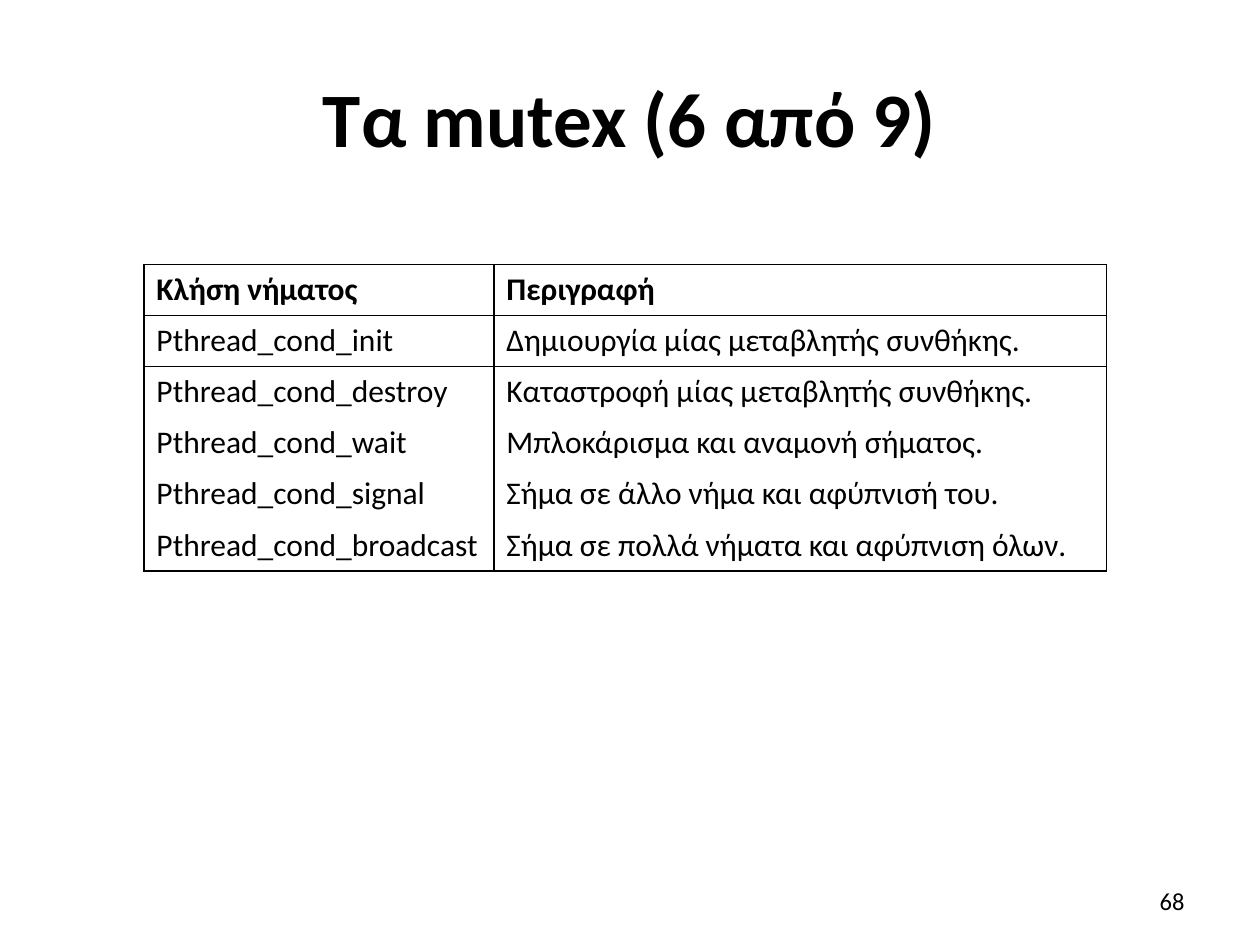
import pptx
import pptx.util
import pptx.dml.color
import pptx.enum.text
import lxml.etree

Pt = pptx.util.Pt
Align = pptx.enum.text.PP_ALIGN
Middle = pptx.enum.text.MSO_ANCHOR.MIDDLE
inks = {"text": "000000", "rule": "000000", "page": "FFFFFF"}
space = "http://schemas.openxmlformats.org/drawingml/2006/main"


def write(frame, words, size, bold=False, align=Align.LEFT):
    para = frame.paragraphs[0]
    para.alignment = align
    run = para.add_run()
    run.text = words
    run.font.name = "Calibri"
    run.font.size = Pt(size)
    run.font.bold = bold
    run.font.color.rgb = pptx.dml.color.RGBColor.from_string(inks["text"])


def edge(cell, side, shown):
    """Draw or blank one border of a cell; side is L, R, T or B."""
    line = lxml.etree.SubElement(
        cell._tc.get_or_add_tcPr(), f"{{{space}}}ln{side}", w=str(Pt(1)))
    if shown:
        fill = lxml.etree.SubElement(line, f"{{{space}}}solidFill")
        lxml.etree.SubElement(fill, f"{{{space}}}srgbClr", val=inks["rule"])
    else:
        lxml.etree.SubElement(line, f"{{{space}}}noFill")


deck = pptx.Presentation()
deck.slide_width, deck.slide_height = Pt(720), Pt(540)
slide = deck.slides.add_slide(deck.slide_layouts[6])
page = slide.background.fill
page.solid()
page.fore_color.rgb = pptx.dml.color.RGBColor.from_string(inks["page"])

# Title and page number
labels = [
    ("Τα mutex (6 από 9)", (36, 21.6, 648, 90), 44, True, Align.CENTER),
    ("68", (516, 500.5, 168, 28.75), 14, False, Align.RIGHT),
]
for words, place, size, bold, align in labels:
    box = slide.shapes.add_textbox(*map(Pt, place))
    frame = box.text_frame
    frame.word_wrap = True
    frame.vertical_anchor = Middle
    write(frame, words, size, bold, align)

# Table of thread calls
calls = [
    ("Κλήση νήματος", "Περιγραφή"),
    ("Pthread_cond_init", "Δημιουργία μίας μεταβλητής συνθήκης."),
    ("Pthread_cond_destroy", "Καταστροφή μίας μεταβλητής συνθήκης."),
    ("Pthread_cond_wait", "Μπλοκάρισμα και αναμονή σήματος."),
    ("Pthread_cond_signal", "Σήμα σε άλλο νήμα και αφύπνισή του."),
    ("Pthread_cond_broadcast", "Σήμα σε πολλά νήματα και αφύπνιση όλων."),
]
widths = [200, 350]
high = 29.2
rules = {0, 1, 2, len(calls)}  # row boundaries that carry a line
table = slide.shapes.add_table(
    len(calls), len(widths), Pt(82.2), Pt(151), Pt(sum(widths)),
    Pt(high * len(calls))).table
table.horz_banding = False
for col, width in zip(table.columns, widths):
    col.width = Pt(width)
for r, texts in enumerate(calls):
    table.rows[r].height = Pt(high)
    for c, words in enumerate(texts):
        cell = table.cell(r, c)
        edge(cell, "L", True)
        edge(cell, "R", True)
        edge(cell, "T", r in rules)
        edge(cell, "B", r + 1 in rules)
        cell.fill.background()
        write(cell.text_frame, words, 18, r == 0)

deck.save("out.pptx")
